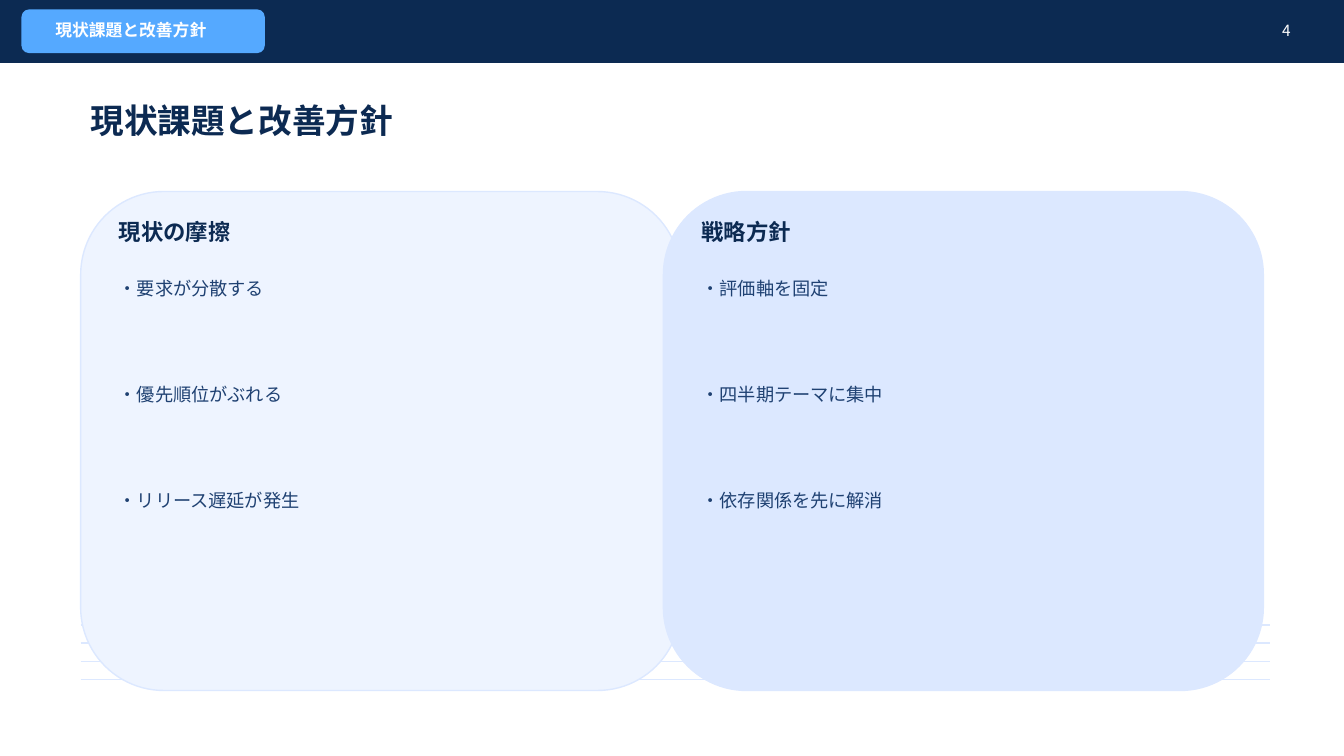
from dataclasses import dataclass

from lxml import etree
from pptx import Presentation
from pptx.dml.color import RGBColor
from pptx.enum.shapes import MSO_CONNECTOR, MSO_SHAPE
from pptx.enum.text import MSO_ANCHOR, PP_ALIGN
from pptx.oxml.ns import qn
from pptx.util import Inches, Pt

STRAIGHT = MSO_CONNECTOR.STRAIGHT
RECTANGLE, ROUNDED = MSO_SHAPE.RECTANGLE, MSO_SHAPE.ROUNDED_RECTANGLE
TOP, MIDDLE = MSO_ANCHOR.TOP, MSO_ANCHOR.MIDDLE
LEFT, RIGHT = PP_ALIGN.LEFT, PP_ALIGN.RIGHT


@dataclass(frozen=True)
class Theme:
    navy: str = "0C2A52"
    sky: str = "55A9FF"
    pale: str = "EEF4FF"
    mist: str = "DCE8FF"
    ink: str = "1F4172"
    white: str = "FFFFFF"
    font: str = "Noto Sans CJK JP"
    title_font: str = "Arial Narrow"
    title_size: int = 24
    heading_size: int = 16
    body_size: int = 13
    tag_size: int = 12
    number_size: int = 11
    line_width: int = 1


theme = Theme()

deck = Presentation()
deck.slide_width, deck.slide_height = Inches(13.33), Inches(7.5)
page = deck.slides.add_slide(deck.slide_layouts[6])
page.background.fill.solid()
page.background.fill.fore_color.rgb = RGBColor.from_string(theme.white)


def add_block(kind, left, top, width, height, fill, line):
    block = page.shapes.add_shape(
        kind, Inches(left), Inches(top), Inches(width), Inches(height))
    block.shadow.inherit = False
    block.fill.solid()
    block.fill.fore_color.rgb = RGBColor.from_string(fill)
    block.line.color.rgb = RGBColor.from_string(line)
    block.line.width = Pt(theme.line_width)


def add_text(text, left, top, width, height, *, size, color, bold=False,
             font=theme.font, align=LEFT, anchor=MIDDLE):
    box = page.shapes.add_textbox(
        Inches(left), Inches(top), Inches(width), Inches(height))
    frame = box.text_frame
    frame.word_wrap = True
    frame.vertical_anchor = anchor
    para = frame.paragraphs[0]
    para.alignment = align
    span = para.add_run()
    span.text = text
    span.font.size = Pt(size)
    span.font.bold = bold
    span.font.color.rgb = RGBColor.from_string(color)
    span.font.name = font
    # Japanese glyphs take their typeface from the East Asian font slot
    etree.SubElement(span.font._element, qn("a:ea"), typeface=theme.font)


# Decorative lines behind the panels
for index in range(4):
    y = Inches(6.2 + 0.18 * index)
    rule = page.shapes.add_connector(STRAIGHT, Inches(0.8), y, Inches(12.6), y)
    rule.line.color.rgb = RGBColor.from_string(theme.mist)
    rule.line.width = Pt(theme.line_width)
    etree.SubElement(rule._element.spPr, qn("a:effectLst"))

# Header band and title
add_block(RECTANGLE, 0, 0, 13.33, 0.62, theme.navy, theme.navy)
add_block(ROUNDED, 0.22, 0.1, 2.4, 0.42, theme.sky, theme.sky)
add_text("現状課題と改善方針", 0.45, 0.18, 8.8, 0.24,
         size=theme.tag_size, color=theme.white, bold=True)
add_text("4", 12.15, 0.18, 0.75, 0.24,
         size=theme.number_size, color=theme.white, align=RIGHT)
add_text("現状課題と改善方針", 0.8, 0.95, 11.4, 0.48,
         size=theme.title_size, color=theme.navy, bold=True,
         font=theme.title_font)

# Two panels, each with a heading and three points
panels = [
    (0.8, theme.pale, "現状の摩擦",
     ["・要求が分散する", "・優先順位がぶれる", "・リリース遅延が発生"]),
    (6.58, theme.mist, "戦略方針",
     ["・評価軸を固定", "・四半期テーマに集中", "・依存関係を先に解消"]),
]
for left, fill, heading, points in panels:
    add_block(ROUNDED, left, 1.9, 5.95, 4.95, fill, theme.mist)
    text_left = left + 0.28
    add_text(heading, text_left, 2.15, 5.2, 0.3,
             size=theme.heading_size, color=theme.navy, bold=True)
    for row, point in enumerate(points):
        add_text(point, text_left, 2.7 + 1.05 * row, 5.25, 0.82,
                 size=theme.body_size, color=theme.ink, anchor=TOP)

deck.save("out.pptx")
